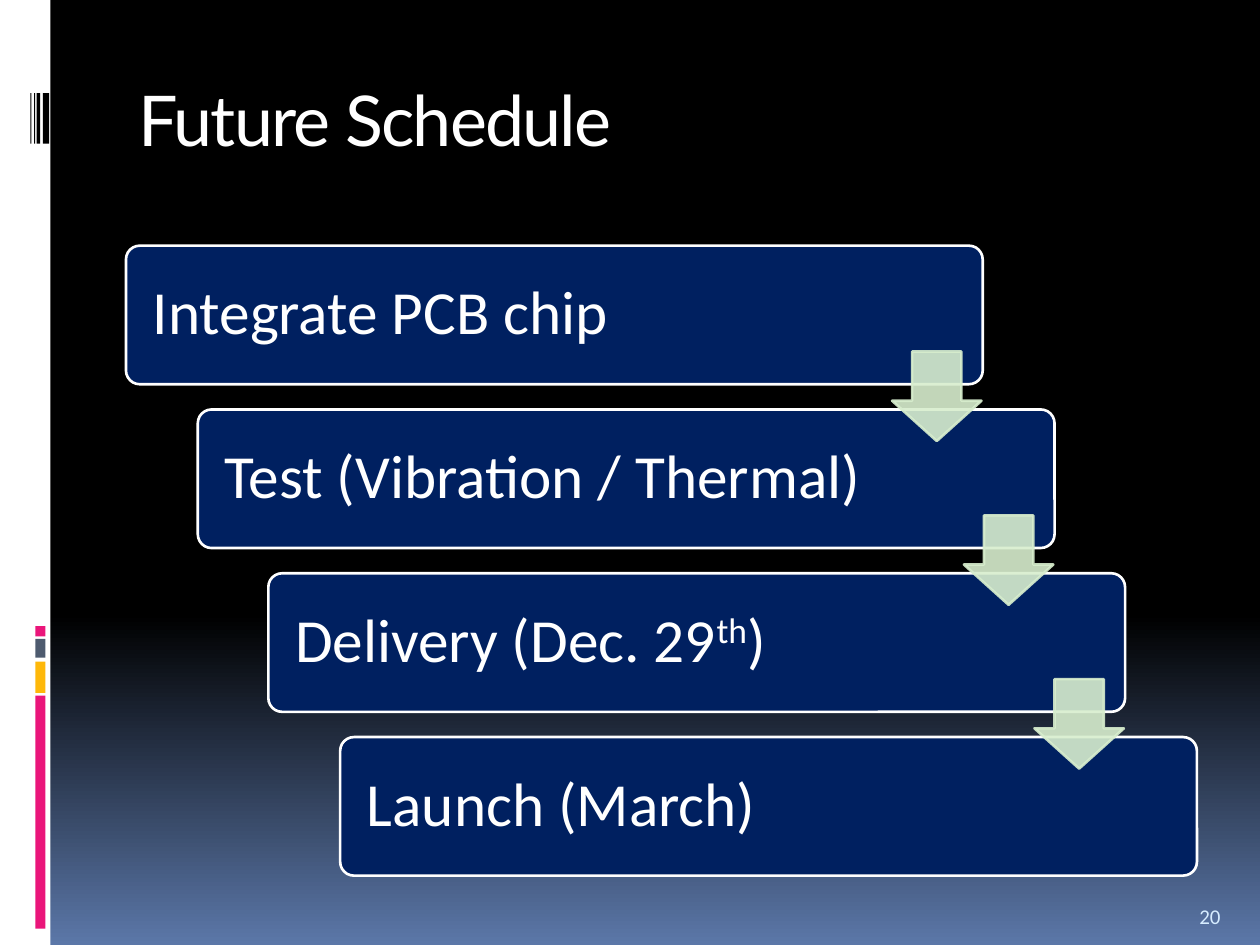
from copy import deepcopy
from dataclasses import dataclass

from pptx import Presentation
from pptx.dml.color import RGBColor
from pptx.enum.shapes import MSO_SHAPE as Shape
from pptx.enum.text import MSO_ANCHOR as Anchor, MSO_AUTO_SIZE as AutoSize, PP_ALIGN as Align
from pptx.oxml.ns import qn
from pptx.util import Pt
from lxml.etree import SubElement

EMU_PER_PX = 9144  # 100 px to the inch


@dataclass(frozen=True)
class Theme:
    white: str = "FFFFFF"
    black: str = "000000"
    dusk: str = "5B77A8"
    pink: str = "EA157A"
    amber: str = "FEB80A"
    slate: str = "4E5B6F"
    navy: str = "002060"
    mint: str = "D8EECE"
    ice: str = "D6ECFF"
    heading_font: str = "Lato"
    body_font: str = "Calibri"
    title_size: int = 40
    step_size: int = 35
    number_size: int = 12
    outline: float = 1.5


def px(length):
    return length * EMU_PER_PX


def apply(target, values):
    for name, value in values.items():
        setattr(target, name, value)


class Deck:
    def __init__(self, theme, width, height):
        self.theme = theme
        self.file = Presentation()
        apply(self.file, {"slide_width": px(width), "slide_height": px(height)})
        self.slide = self.file.slides.add_slide(self.file.slide_layouts[5])

    def background(self, stops):
        fill = self.slide.background.fill
        fill.gradient()
        fill.gradient_angle = 270
        stop_list = next(self.slide.element.iter(qn("a:gsLst")))
        while len(stop_list) < len(stops):
            stop_list.append(deepcopy(stop_list[0]))
        for stop, (position, color) in zip(fill.gradient_stops, stops):
            stop.position = position
            stop.color.rgb = RGBColor.from_string(color)

    def shape(self, kind, box, color, line=None, adjustments=(), opacity=100):
        shape = self.slide.shapes.add_shape(kind, *map(px, box))
        shape.shadow.inherit = False
        shape.fill.solid()
        shape.fill.fore_color.rgb = RGBColor.from_string(color)
        if line:
            shape.line.color.rgb = RGBColor.from_string(line)
            shape.line.width = Pt(self.theme.outline)
        else:
            shape.line.fill.background()
        for index, value in enumerate(adjustments):
            shape.adjustments[index] = value
        if opacity < 100:
            for tint in shape.element.spPr.iter(qn("a:srgbClr")):
                SubElement(tint, qn("a:alpha"), val=str(opacity * 1000))
        return shape

    def set_text(self, shape, parts, size, color, font, frame, spacing=1.0):
        """Parts are (text, raised) pairs of one paragraph."""
        apply(shape.text_frame, {"word_wrap": True, "auto_size": AutoSize.NONE, **frame})
        paragraph = shape.text_frame.paragraphs[0]
        apply(paragraph, {"alignment": Align.LEFT, "line_spacing": spacing})
        for text, raised in parts:
            run = paragraph.add_run()
            run.text = text
            apply(run.font, {"size": Pt(size), "name": font})
            run.font.color.rgb = RGBColor.from_string(color)
            if raised:
                run.font._element.set("baseline", "30000")
        return paragraph

    def title(self, text, box):
        title, theme = self.slide.shapes.title, self.theme
        apply(title, dict(zip(("left", "top", "width", "height"), map(px, box))))
        paragraph = self.set_text(title, [(text, False)], theme.title_size, theme.white,
                                  theme.heading_font, {"vertical_anchor": Anchor.TOP})
        paragraph.runs[0].font._element.set("spc", "-100")

    def step(self, parts, box):
        theme = self.theme
        card = self.shape(Shape.ROUNDED_RECTANGLE, box, theme.navy, theme.white, [0.1])
        margins = {f"margin_{side}": px(18) for side in ("left", "top", "right", "bottom")}
        self.set_text(card, parts, theme.step_size, theme.white, theme.body_font,
                      {"vertical_anchor": Anchor.MIDDLE, **margins}, spacing=0.9)

    def arrow(self, box):
        mint = self.theme.mint
        self.shape(Shape.DOWN_ARROW, box, mint, mint, [0.55, 0.45], opacity=90)

    def page_number(self, text, box):
        number = self.slide.shapes.add_textbox(*map(px, box))
        self.set_text(number, [(text, False)], self.theme.number_size, self.theme.ice,
                      self.theme.body_font, {"vertical_anchor": Anchor.BOTTOM})


def main():
    theme = Theme()
    deck = Deck(theme, 1000, 750)
    deck.background([(0, theme.black), (0.65, theme.black), (1, theme.dusk)])

    # Side strip with colour blocks and barcode
    deck.shape(Shape.RECTANGLE, (0, 0, 40, 750), theme.white)
    for top, height, color in ((552, 185, theme.pink), (525, 25, theme.amber),
                               (507, 15, theme.slate), (497, 8, theme.pink)):
        deck.shape(Shape.RECTANGLE, (28, top, 8, height), color)
    for left, width in ((34, 5), (29, 3), (27, 1), (24, 1)):
        deck.shape(Shape.RECTANGLE, (left, 74, width, 40), theme.black)

    deck.title("Future Schedule", (100, 56, 850, 100))

    # Staircase of steps
    steps = (
        [("Integrate PCB chip", False)],
        [("Test (Vibration / Thermal)", False)],
        [("Delivery (Dec. 29", False), ("th", True), (")", False)],
        [("Launch (March)", False)],
    )
    corners = [(100 + round(i * 170 / 3), 195 + i * 130) for i in range(len(steps))]
    for parts, (left, top) in zip(steps, corners):
        deck.step(parts, (left, top, 680, 110))

    # Arrows from each step to the next
    for left, top in corners[:-1]:
        deck.arrow((left + 608, top + 84, 71, 71))

    deck.page_number("20", (942, 702, 50, 40))
    deck.file.save("out.pptx")


if __name__ == "__main__":
    main()
